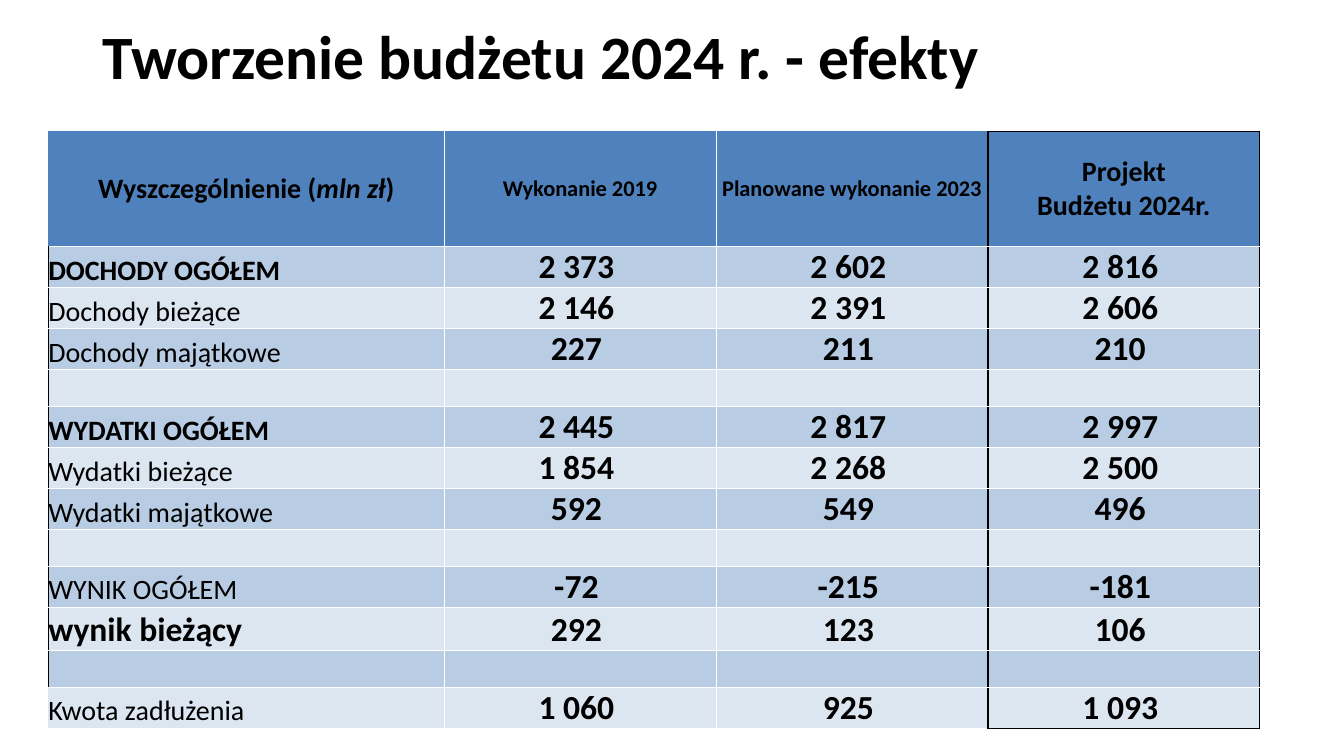
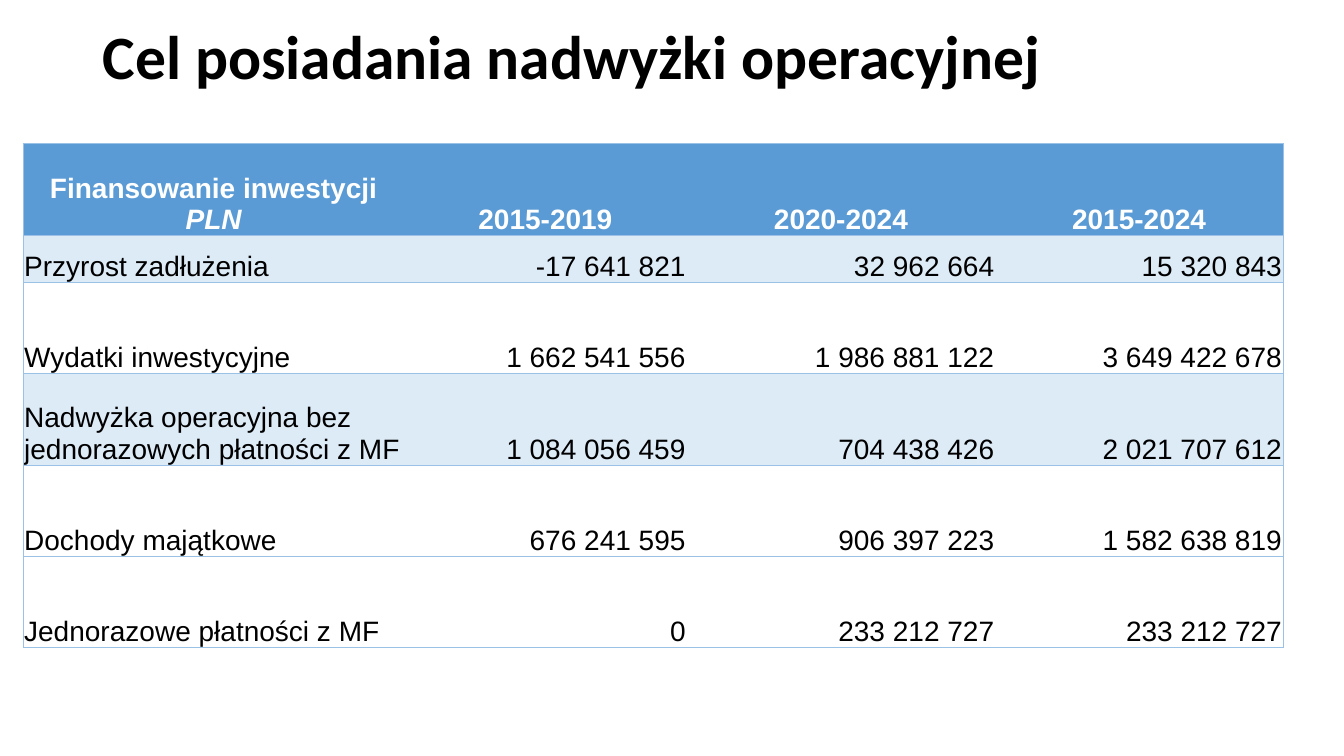
from dataclasses import dataclass

from lxml import etree
from pptx import Presentation
from pptx.dml.color import RGBColor
from pptx.enum.text import MSO_ANCHOR, MSO_AUTO_SIZE, PP_ALIGN
from pptx.oxml.ns import qn
from pptx.util import Pt

LEFT, CENTER, RIGHT = PP_ALIGN.LEFT, PP_ALIGN.CENTER, PP_ALIGN.RIGHT
MIDDLE, BOTTOM = MSO_ANCHOR.MIDDLE, MSO_ANCHOR.BOTTOM
NO_AUTOFIT = MSO_AUTO_SIZE.NONE

PX = 9525
SLIDE_SIZE = (1280, 720)
TITLE_BOX = (88, 14, 1104, 86)
TITLE_ONLY = 5
PLAIN_TABLE_STYLE = "{2D5ABB26-0587-4C30-8999-92F81FD0307C}"


@dataclass(frozen=True)
class Theme:
    black: str = "000000"
    white: str = "FFFFFF"
    budget_header: str = "4F81BD"
    budget_bands: tuple = ("B8CCE4", "DCE6F1")
    investment_header: str = "5B9BD5"
    investment_band: str = "DDEBF7"
    investment_line: str = "9BC2E6"
    heading_font: str = "Calibri"
    plain_font: str = "Arial"
    title_size: int = 44
    figure_size: int = 24
    label_size: int = 20
    small_size: int = 16
    thin: float = 0.75
    strong: float = 1


THEME = Theme()


@dataclass(frozen=True)
class TextStyle:
    font: str
    size: int
    color: str = THEME.black
    bold: bool = False


BUDGET_ROWS = [
    ("DOCHODY OGÓŁEM", "2 373", "2 602", "2 816"),
    ("Dochody bieżące", "2 146", "2 391", "2 606"),
    ("Dochody majątkowe", "227", "211", "210"),
    (),
    ("WYDATKI OGÓŁEM", "2 445", "2 817", "2 997"),
    ("Wydatki bieżące", "1 854", "2 268", "2 500"),
    ("Wydatki majątkowe", "592", "549", "496"),
    (),
    ("WYNIK OGÓŁEM", "-72", "-215", "-181"),
    ("wynik bieżący", "292", "123", "106"),
    (),
    ("Kwota zadłużenia", "1 060", "925", "1 093"),
]
KEY_RESULT = "wynik bieżący"
BOLD_LABELS = ("DOCHODY OGÓŁEM", "WYDATKI OGÓŁEM", KEY_RESULT)

INVESTMENT_ROWS = [
    ("Przyrost zadłużenia", "-17 641 821", "32 962 664", "15 320 843"),
    ("Wydatki inwestycyjne", "1 662 541 556", "1 986 881 122", "3 649 422 678"),
    ("Nadwyżka operacyjna bez jednorazowych płatności z MF",
     "1 084 056 459", "704 438 426", "2 021 707 612"),
    ("Dochody majątkowe", "676 241 595", "906 397 223", "1 582 638 819"),
    ("Jednorazowe płatności z MF", "0", "233 212 727", "233 212 727"),
]


def format_runs(paragraph, style):
    for run in paragraph.runs:
        run.font.name = style.font
        run.font.size = Pt(style.size)
        run.font.bold = style.bold
        run.font.color.rgb = RGBColor.from_string(style.color)


def write_cell(cell, parts, style, alignment, anchor=BOTTOM):
    first, *others = parts
    cell.vertical_anchor = anchor
    cell.text_frame.text = first
    for index, part in enumerate(others):
        run = cell.text_frame.paragraphs[-1].add_run()
        run.text = part
        run.font.italic = index % 2 == 0
    for paragraph in cell.text_frame.paragraphs:
        paragraph.alignment = alignment
        format_runs(paragraph, style)


def set_margins(cell, left, top, right, bottom):
    cell.margin_left, cell.margin_top = left * PX, top * PX
    cell.margin_right, cell.margin_bottom = right * PX, bottom * PX


def paint_cell(cell, fill, borders):
    properties = cell._tc.get_or_add_tcPr()
    for side in "LRTB":
        if side in borders:
            color, width = borders[side]
            line = etree.SubElement(properties, qn(f"a:ln{side}"), w=str(int(Pt(width))))
            solid = etree.SubElement(line, qn("a:solidFill"))
            etree.SubElement(solid, qn("a:srgbClr"), val=color)
    if fill:
        cell.fill.solid()
        cell.fill.fore_color.rgb = RGBColor.from_string(fill)


def add_grid(slide, left, top, widths, heights):
    box = (left, top, sum(widths), sum(heights))
    frame = slide.shapes.add_table(len(heights), len(widths), *(value * PX for value in box))
    table = frame.table
    table.horz_banding = False
    for style_id in frame.element.iter(qn("a:tableStyleId")):
        style_id.text = PLAIN_TABLE_STYLE
    for column, width in zip(table.columns, widths):
        column.width = width * PX
    for row, height in zip(table.rows, heights):
        row.height = height * PX
    return table


def add_titled_slide(presentation, title_text):
    slide = presentation.slides.add_slide(presentation.slide_layouts[TITLE_ONLY])
    title = slide.shapes.title
    title.left, title.top, title.width, title.height = (value * PX for value in TITLE_BOX)
    frame = title.text_frame
    frame.text = title_text
    frame.word_wrap = True
    frame.auto_size = NO_AUTOFIT
    frame.vertical_anchor = MIDDLE
    paragraph = frame.paragraphs[0]
    paragraph.alignment = LEFT
    paragraph.line_spacing = 0.9
    format_runs(paragraph, TextStyle(THEME.heading_font, THEME.title_size, bold=True))
    return slide


def budget_borders(row, column, last_row, last_column):
    white, black = (THEME.white, THEME.thin), (THEME.black, THEME.strong)
    borders = {}
    if column > 0:
        borders["L"] = black if column == last_column else white
    elif 0 < row < last_row:
        borders["L"] = (THEME.black, THEME.thin)
    borders["R"] = black if column >= last_column - 1 else white
    if row > 0:
        borders["T"] = white
    elif column == last_column:
        borders["T"] = black
    if row < last_row:
        borders["B"] = white
    elif column == last_column:
        borders["B"] = black
    return borders


def budget_row_height(values):
    if not values:
        return 35
    return 41 if values[0] == KEY_RESULT else 39


def add_budget_table(slide, left, top):
    widths = [377, 259, 259, 259]
    heights = [110] + [budget_row_height(values) for values in BUDGET_ROWS]
    table = add_grid(slide, left, top, widths, heights)
    large = TextStyle(THEME.heading_font, THEME.label_size, bold=True)
    small = TextStyle(THEME.heading_font, THEME.small_size, bold=True)
    figure = TextStyle(THEME.heading_font, THEME.figure_size, bold=True)
    headings = [
        (("Wyszczególnienie (", "mln zł", ")"), large),
        (("Wykonanie 2019",), small),
        (("Planowane wykonanie 2023",), small),
        (("Projekt\nBudżetu 2024r.",), large),
    ]
    for row in range(len(heights)):
        fill = THEME.budget_bands[(row - 1) % 2] if row else THEME.budget_header
        for column in range(len(widths)):
            cell = table.cell(row, column)
            set_margins(cell, 0, 0, 0, 0)
            paint_cell(cell, fill, budget_borders(row, column, len(heights) - 1, len(widths) - 1))
    for column, (parts, style) in enumerate(headings):
        write_cell(table.cell(0, column), parts, style, CENTER, MIDDLE)
    for row, values in enumerate(BUDGET_ROWS, start=1):
        for column, text in enumerate(values):
            cell = table.cell(row, column)
            if column:
                set_margins(cell, 0, 0, 7, 0)
                write_cell(cell, (text,), figure, CENTER)
            else:
                size = THEME.figure_size if text == KEY_RESULT else THEME.label_size
                style = TextStyle(THEME.heading_font, size, bold=text in BOLD_LABELS)
                write_cell(cell, (text,), style, LEFT)


def add_investment_table(slide, left, top):
    widths = [363, 269, 294, 274]
    heights = [87, 45, 87, 87, 87, 87]
    table = add_grid(slide, left, top, widths, heights)
    heading = TextStyle(THEME.plain_font, THEME.label_size, THEME.white, True)
    body = TextStyle(THEME.plain_font, THEME.label_size)
    headings = [("Finansowanie inwestycji ", "PLN"), ("2015-2019",), ("2020-2024",), ("2015-2024",)]
    rows = [headings] + [[(text,) for text in values] for values in INVESTMENT_ROWS]
    fills = [THEME.investment_header, THEME.investment_band, None, THEME.investment_band, None, None]
    outer_sides = {0: "L", len(widths) - 1: "R"}
    for row, (values, fill) in enumerate(zip(rows, fills)):
        for column, parts in enumerate(values):
            cell = table.cell(row, column)
            set_margins(cell, 1, 1, 1, 0)
            sides = "TB" + outer_sides.get(column, "")
            paint_cell(cell, fill, {side: (THEME.investment_line, THEME.thin) for side in sides})
            if row == 0:
                write_cell(cell, parts, heading, CENTER)
            else:
                write_cell(cell, parts, body, RIGHT if column else LEFT)


def main():
    presentation = Presentation()
    presentation.slide_width, presentation.slide_height = (value * PX for value in SLIDE_SIZE)
    budget_slide = add_titled_slide(presentation, "Tworzenie budżetu 2024 r. - efekty")
    add_budget_table(budget_slide, 46, 125)
    investment_slide = add_titled_slide(presentation, "Cel posiadania nadwyżki operacyjnej")
    add_investment_table(investment_slide, 22, 137)
    presentation.save("out.pptx")


if __name__ == "__main__":
    main()
